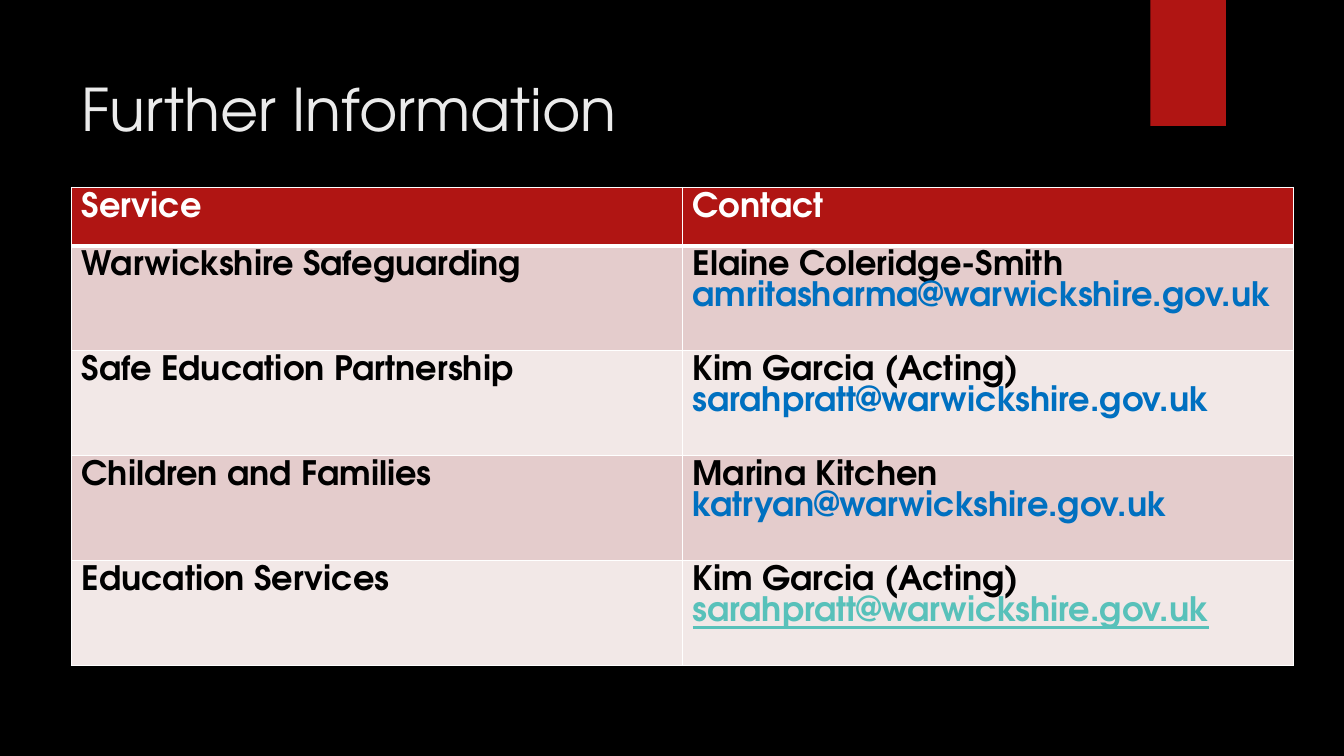
from lxml import etree
from pptx import Presentation
from pptx.dml.color import RGBColor
from pptx.enum.shapes import MSO_SHAPE
from pptx.enum.text import MSO_ANCHOR
from pptx.oxml.ns import qn
from pptx.util import Inches, Pt

RECTANGLE = MSO_SHAPE.RECTANGLE
TOP = MSO_ANCHOR.TOP

BLACK = RGBColor(0x00, 0x00, 0x00)
WHITE = RGBColor(0xFF, 0xFF, 0xFF)
OFF_WHITE = RGBColor(0xEB, 0xEB, 0xEB)
RED = RGBColor(0xB0, 0x15, 0x13)
ROSE = RGBColor(0xE4, 0xCC, 0xCC)
PALE_ROSE = RGBColor(0xF2, 0xE8, 0xE7)
BLUE = RGBColor(0x00, 0x70, 0xC0)
TEAL = RGBColor(0x58, 0xC1, 0xBA)
FONT = "TeX Gyre Adventor"

TITLE = "Further Information"
HEADINGS = ("Service", "Contact")
SERVICES = [
    ("Warwickshire Safeguarding", "Elaine Coleridge-Smith", "amritasharma@warwickshire.gov.uk"),
    ("Safe Education Partnership", "Kim Garcia (Acting)", "sarahpratt@warwickshire.gov.uk"),
    ("Children and Families", "Marina Kitchen", "katryan@warwickshire.gov.uk"),
    ("Education Services", "Kim Garcia (Acting)", "sarahpratt@warwickshire.gov.uk"),
]

TITLE_STYLE = {"size": Pt(42), "color": OFF_WHITE}
HEADING_STYLE = {"size": Pt(24), "bold": True, "color": WHITE}
BODY_STYLE = {**HEADING_STYLE, "color": BLACK}
EMAIL_STYLE = {**HEADING_STYLE, "color": BLUE}
LINK_STYLE = {**HEADING_STYLE, "color": TEAL, "underline": True}

LEFT = 0.71
TABLE_TOP, COLUMN_WIDTH = 1.86, 6.06
HEADING_HEIGHT, ROW_HEIGHT = 0.58, 1.04


def write(frame, lines):
    """Fill a text frame with one paragraph per (text, style) pair."""
    for index, (text, style) in enumerate(lines):
        para = frame.add_paragraph() if index else frame.paragraphs[0]
        span = para.add_run()
        span.text = text
        span.font.name = FONT
        for name, value in style.items():
            if name == "color":
                span.font.color.rgb = value
            else:
                setattr(span.font, name, value)


def set_borders(cell, widths):
    """Draw white borders; widths maps an edge tag to points."""
    properties = cell._tc.get_or_add_tcPr()
    for position, (edge, width) in enumerate(widths.items()):
        line = etree.Element(qn(f"a:{edge}"), w=str(Pt(width)))
        fill = etree.SubElement(line, qn("a:solidFill"))
        etree.SubElement(fill, qn("a:srgbClr"), val=str(WHITE))
        properties.insert(position, line)


def add_title(page):
    box = page.shapes.add_textbox(Inches(LEFT), Inches(0.5), Inches(10.29), Inches(1.53))
    frame = box.text_frame
    frame.word_wrap = True
    frame.vertical_anchor = TOP
    frame.margin_top = Inches(0.22)
    write(frame, [(TITLE, TITLE_STYLE)])


def add_ribbon(page):
    ribbon = page.shapes.add_shape(RECTANGLE, Inches(11.41), 0, Inches(0.75), Inches(1.25))
    ribbon.shadow.inherit = False
    ribbon.fill.solid()
    ribbon.fill.fore_color.rgb = RED
    ribbon.line.fill.background()


def add_contacts(page):
    rows = [[[(heading, HEADING_STYLE)] for heading in HEADINGS]]
    for service, person, email in SERVICES:
        email_style = LINK_STYLE if service == "Education Services" else EMAIL_STYLE
        rows.append([[(service, BODY_STYLE)], [(person, BODY_STYLE), (email, email_style)]])

    heights = [HEADING_HEIGHT] + [ROW_HEIGHT] * len(SERVICES)
    table = page.shapes.add_table(
        len(rows), len(HEADINGS), Inches(LEFT), Inches(TABLE_TOP),
        Inches(COLUMN_WIDTH * len(HEADINGS)), Inches(sum(heights))).table
    for column in table.columns:
        column.width = Inches(COLUMN_WIDTH)

    for r, (row, height) in enumerate(zip(rows, heights)):
        table.rows[r].height = Inches(height)
        color = RED if r == 0 else ROSE if r % 2 else PALE_ROSE
        borders = {"lnL": 1, "lnR": 1, "lnT": 3 if r == 1 else 1, "lnB": 3 if r == 0 else 1}
        for c, lines in enumerate(row):
            cell = table.cell(r, c)
            cell.fill.solid()
            cell.fill.fore_color.rgb = color
            set_borders(cell, borders)
            write(cell.text_frame, lines)


def main():
    deck = Presentation()
    deck.slide_width, deck.slide_height = Inches(13.33), Inches(7.5)
    page = deck.slides.add_slide(deck.slide_layouts[6])
    page.background.fill.solid()
    page.background.fill.fore_color.rgb = BLACK
    add_ribbon(page)
    add_title(page)
    add_contacts(page)
    deck.save("out.pptx")


if __name__ == "__main__":
    main()
